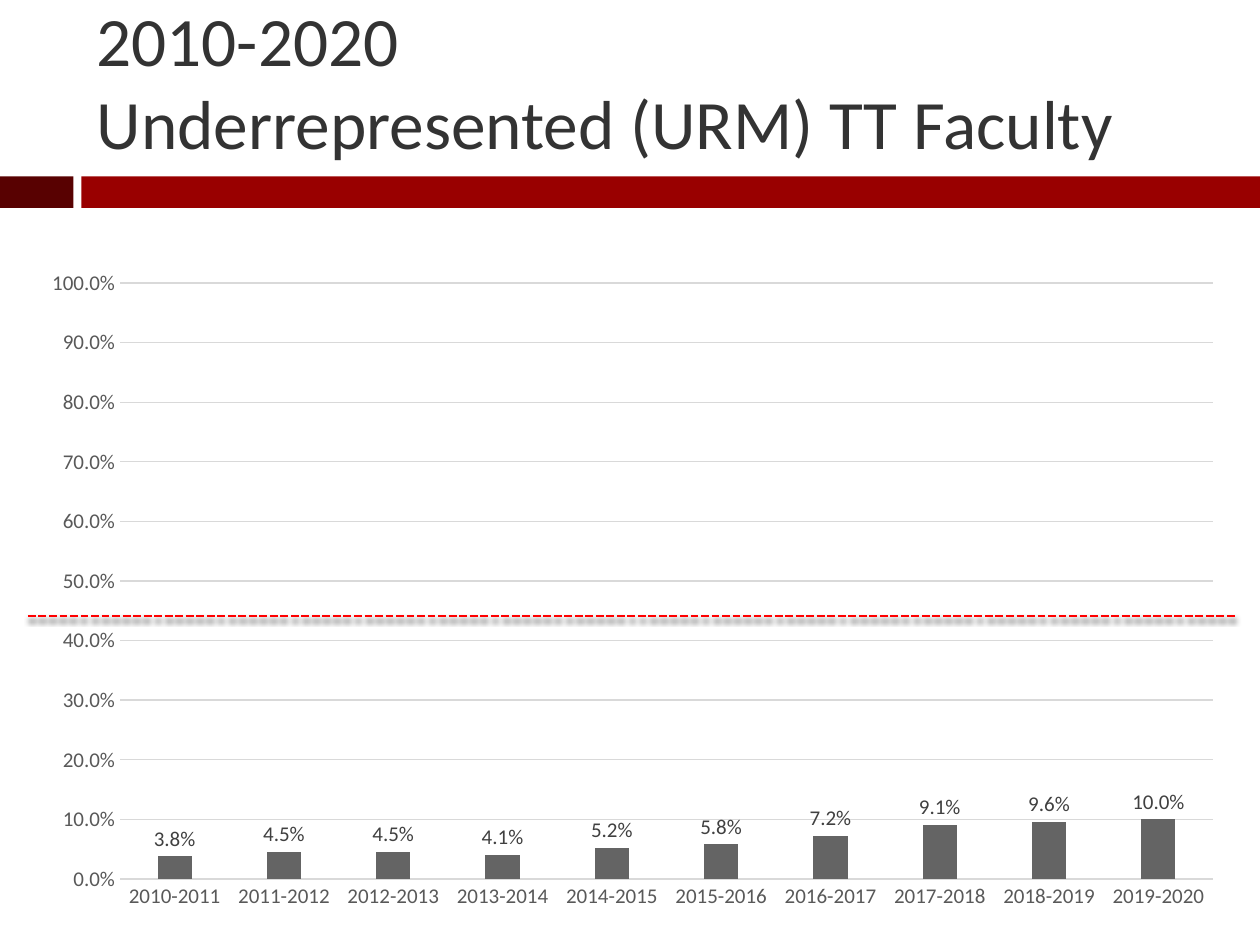
from lxml.etree import SubElement
from pptx import Presentation
from pptx.chart.data import CategoryChartData
from pptx.dml.color import RGBColor
from pptx.enum.chart import XL_CHART_TYPE, XL_LABEL_POSITION, XL_TICK_MARK
from pptx.enum.dml import MSO_LINE
from pptx.enum.shapes import MSO_CONNECTOR, MSO_SHAPE
from pptx.enum.text import MSO_ANCHOR, MSO_AUTO_SIZE, PP_ALIGN
from pptx.oxml.ns import qn
from pptx.util import Pt

COLORS = {
    "dark_red": "580101", "red": "990000", "title": "333333",
    "bar": "646464", "label": "404040", "axis": "595959",
    "grid": "D9D9D9", "goal": "FF0000", "shadow": "000000",
}
SHARES = [0.038, 0.045, 0.045, 0.041, 0.052, 0.058, 0.072, 0.091, 0.096, 0.1]
FIRST_YEAR = 2010


def color(name):
    return RGBColor.from_string(COLORS[name])


class SlideBuilder:
    font_name = "Calibri"
    percent = "0.0%"

    def __init__(self, slide):
        self.slide = slide

    def style_font(self, font, size, color_name):
        font.name = self.font_name
        font.size = Pt(size)
        font.color.rgb = color(color_name)

    def band(self, left, top, width, height, fill):
        band = self.slide.shapes.add_shape(
            MSO_SHAPE.RECTANGLE, Pt(left), Pt(top), Pt(width), Pt(height))
        band.shadow.inherit = False
        band.fill.solid()
        band.fill.fore_color.rgb = color(fill)
        band.line.fill.background()

    def title(self, text, left, top, width, height):
        title = self.slide.shapes.title
        title.left, title.top = Pt(left), Pt(top)
        title.width, title.height = Pt(width), Pt(height)
        frame = title.text_frame
        frame.text = text
        frame.auto_size = MSO_AUTO_SIZE.NONE
        frame.vertical_anchor = MSO_ANCHOR.MIDDLE
        for paragraph in frame.paragraphs:
            paragraph.alignment = PP_ALIGN.LEFT
            paragraph.space_before = Pt(0)
            for run in paragraph.runs:
                self.style_font(run.font, 39.6, "title")

    def column_chart(self, categories, values, left, top, width, height):
        data = CategoryChartData(number_format=self.percent)
        data.categories = categories
        data.add_series("Series 1", values)
        chart = self.slide.shapes.add_chart(
            XL_CHART_TYPE.COLUMN_CLUSTERED,
            Pt(left), Pt(top), Pt(width), Pt(height), data).chart
        chart.has_legend = False
        chart.has_title = False
        chart.font.name = self.font_name
        chart.font.size = Pt(10)

        # Axes and gridlines
        years, share = chart.category_axis, chart.value_axis
        for axis in (years, share):
            axis.major_tick_mark = axis.minor_tick_mark = XL_TICK_MARK.NONE
            self.style_font(axis.tick_labels.font, 12, "axis")
        share.minimum_scale, share.maximum_scale = 0, 1
        share.major_unit = 0.1
        share.tick_labels.number_format = self.percent
        share.tick_labels.number_format_is_linked = False
        share.format.line.fill.background()
        for line in (years.format.line, share.major_gridlines.format.line):
            line.color.rgb = color("grid")
            line.width = Pt(0.75)

        # Columns and their labels
        plot = chart.plots[0]
        plot.gap_width, plot.overlap = 219, -27
        plot.vary_by_categories = False
        columns = plot.series[0]
        columns.format.fill.solid()
        columns.format.fill.fore_color.rgb = color("bar")
        labels = columns.data_labels
        labels.show_value = True
        labels.position = XL_LABEL_POSITION.OUTSIDE_END
        labels.number_format = self.percent
        labels.number_format_is_linked = False
        self.style_font(labels.font, 12, "label")

    def dashed_line(self, left, right, y, line_color):
        connector = self.slide.shapes.add_connector(
            MSO_CONNECTOR.STRAIGHT, Pt(left), Pt(y), Pt(right), Pt(y))
        connector.line.color.rgb = color(line_color)
        connector.line.width = Pt(1.5)
        connector.line.dash_style = MSO_LINE.SQUARE_DOT
        # Soft shadow straight below the line
        effects = SubElement(connector.element.spPr, qn("a:effectLst"))
        shadow = SubElement(
            effects, qn("a:outerShdw"), blurRad=str(Pt(3)),
            dist=str(Pt(2.4)), dir="5400000", rotWithShape="0")
        tint = SubElement(shadow, qn("a:srgbClr"), val=COLORS["shadow"])
        SubElement(tint, qn("a:alpha"), val="45000")


def main():
    deck = Presentation()
    deck.slide_width, deck.slide_height = Pt(720), Pt(540)
    builder = SlideBuilder(deck.slides.add_slide(deck.slide_layouts[5]))

    # Heading with the two-part band below it
    builder.band(0, 100.8, 42, 18, "dark_red")
    builder.band(46.5, 100.8, 673.5, 18, "red")
    builder.title("2010-2020\nUnderrepresented (URM) TT Faculty",
                  48, 18, 642, 56)

    # Share of URM faculty per academic year, with the goal line
    years = [f"{year}-{year + 1}"
             for year in range(FIRST_YEAR, FIRST_YEAR + len(SHARES))]
    builder.column_chart(years, SHARES, 16, 147, 691, 380)
    builder.dashed_line(16, 707, 352, "goal")

    deck.save("out.pptx")


if __name__ == "__main__":
    main()
